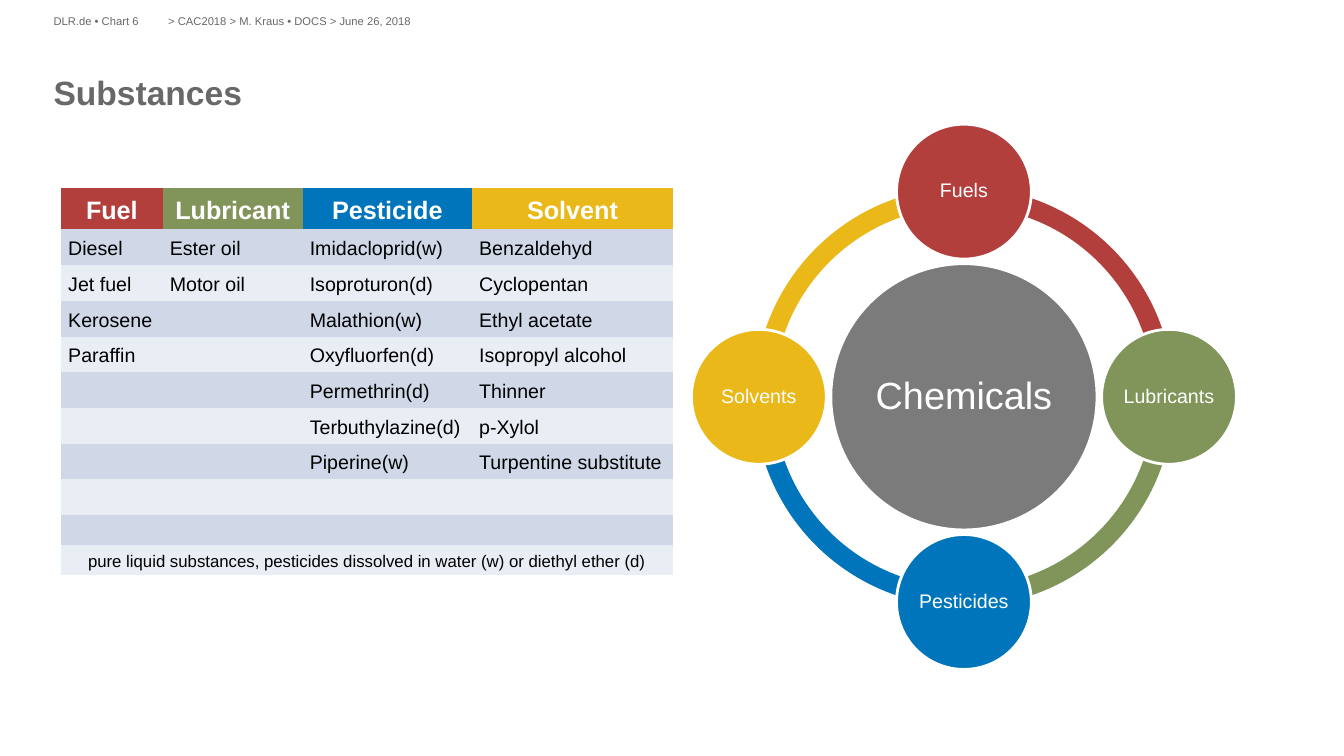
from dataclasses import dataclass
from itertools import zip_longest
from math import cos, radians, sin

from pptx import Presentation
from pptx import util as u
from pptx.dml.color import RGBColor
from pptx.enum import shapes, text


@dataclass(frozen=True)
class Theme:
    font: str = "Arial"
    red: str = "B33F3D"
    green: str = "819459"
    blue: str = "0075BB"
    yellow: str = "EAB818"
    hub: str = "7B7B7B"
    heading: str = "686868"
    black: str = "000000"
    white: str = "FFFFFF"
    bands: tuple[str, str] = ("D0D8E8", "E9EDF4")
    title_size: float = 24
    strap_size: float = 8
    hub_size: float = 27
    column_size: float = 18
    body_size: float = 14
    footnote_size: float = 12


@dataclass(frozen=True)
class Group:
    column: str
    plural: str
    color: str
    width: float
    substances: tuple[str, ...]


@dataclass(frozen=True)
class Caption:
    words: str
    left: float
    top: float
    width: float
    height: float
    size: float
    bold: bool = False


THEME = Theme()
GROUPS = (
    Group("Fuel", "Fuels", THEME.red, 2.56, ("Diesel", "Jet fuel", "Kerosene", "Paraffin")),
    Group("Lubricant", "Lubricants", THEME.green, 3.53, ("Ester oil", "Motor oil")),
    Group("Pesticide", "Pesticides", THEME.blue, 4.27,
          ("Imidacloprid(w)", "Isoproturon(d)", "Malathion(w)", "Oxyfluorfen(d)",
           "Permethrin(d)", "Terbuthylazine(d)", "Piperine(w)")),
    Group("Solvent", "Solvents", THEME.yellow, 5.07,
          ("Benzaldehyd", "Cyclopentan", "Ethyl acetate", "Isopropyl alcohol",
           "Thinner", "p-Xylol", "Turpentine substitute")),
)
CAPTIONS = (
    Caption("Substances", 1.35, 1.8, 31.17, 2.06, THEME.title_size, True),
    Caption("> CAC2018 > M. Kraus • DOCS > June 26, 2018", 4.24, 0.36, 28.27, 0.41, THEME.strap_size),
    Caption("DLR.de • Chart 6", 1.35, 0.36, 2.9, 0.41, THEME.strap_size),
)
FOOTNOTE = "pure liquid substances, pesticides dissolved in water (w) or diethyl ether (d)"
ROW_HEIGHTS = (1.04, *[0.9] * 8, 0.74, 0.74)
NO_STYLE = "{2D5ABB26-0587-4C30-8999-92F81FD0307C}"
CENTER_X, CENTER_Y = 24.3, 10.0
RING, HUB, DISC, ORBIT = 10.57, 6.71, 3.4, 5.17


def write(frame, words: str, size: float, color: str, bold: bool = False,
          centered: bool = False, spacing: float = 1.0) -> None:
    """Fill a text frame with one formatted paragraph."""
    frame.text = words
    paragraph = frame.paragraphs[0]
    paragraph.alignment = text.PP_ALIGN.CENTER if centered else text.PP_ALIGN.LEFT
    paragraph.line_spacing = spacing
    for run in paragraph.runs:
        run.font.name = THEME.font
        run.font.size = u.Pt(size)
        run.font.bold = bold
        run.font.color.rgb = RGBColor.from_string(color)


def clear_margins(frame) -> None:
    """Remove the inner margins of a text frame."""
    frame.margin_left = frame.margin_right = frame.margin_top = frame.margin_bottom = 0


def add_caption(slide, caption: Caption) -> None:
    """Add a line of heading text."""
    box = slide.shapes.add_textbox(u.Cm(caption.left), u.Cm(caption.top),
                                   u.Cm(caption.width), u.Cm(caption.height))
    clear_margins(box.text_frame)
    box.text_frame.word_wrap = True
    write(box.text_frame, caption.words, caption.size, THEME.heading, caption.bold)


def add_round(slide, preset: shapes.MSO_SHAPE, x: float, y: float, diameter: float, color: str):
    """Add a filled round shape centred on a point."""
    figure = slide.shapes.add_shape(preset, u.Cm(x - diameter / 2), u.Cm(y - diameter / 2),
                                    u.Cm(diameter), u.Cm(diameter))
    figure.shadow.inherit = False
    figure.fill.solid()
    figure.fill.fore_color.rgb = RGBColor.from_string(color)
    figure.line.fill.background()
    return figure


def add_arc(slide, start: float, color: str) -> None:
    """Add a quarter of the ring, clockwise from a start angle."""
    arc = add_round(slide, shapes.MSO_SHAPE.BLOCK_ARC, CENTER_X, CENTER_Y, RING, color)
    arc.adjustments[0] = start * 0.6
    arc.adjustments[1] = (start + 90) % 360 * 0.6
    arc.adjustments[2] = 0.046


def add_disc(slide, x: float, y: float, diameter: float, color: str, label: str, size: float) -> None:
    """Add a white-edged disc with its label."""
    disc = add_round(slide, shapes.MSO_SHAPE.OVAL, x, y, diameter, color)
    disc.line.color.rgb = RGBColor.from_string(THEME.white)
    disc.line.width = u.Pt(2)
    clear_margins(disc.text_frame)
    disc.text_frame.word_wrap = False
    disc.text_frame.vertical_anchor = text.MSO_ANCHOR.MIDDLE
    write(disc.text_frame, label, size, THEME.white, centered=True, spacing=0.9)


def add_wheel(slide) -> None:
    """Draw the ring of groups around the hub."""
    starts = [(270 + 90 * index) % 360 for index in range(len(GROUPS))]
    for start, group in zip(starts, GROUPS):
        add_arc(slide, start, group.color)
    add_disc(slide, CENTER_X, CENTER_Y, HUB, THEME.hub, "Chemicals", THEME.hub_size)
    for start, group in zip(starts, GROUPS):
        add_disc(slide, CENTER_X + ORBIT * cos(radians(start)), CENTER_Y + ORBIT * sin(radians(start)),
                 DISC, group.color, group.plural, THEME.body_size)


def style_cell(cell, color: str) -> None:
    """Set the fill, margins and anchor of a cell."""
    cell.fill.solid()
    cell.fill.fore_color.rgb = RGBColor.from_string(color)
    cell.margin_left = cell.margin_right = u.Cm(0.18)
    cell.margin_top = cell.margin_bottom = 0
    cell.vertical_anchor = text.MSO_ANCHOR.MIDDLE


def add_substances(slide) -> None:
    """Add the table of substances by group."""
    last = len(ROW_HEIGHTS) - 1
    table = slide.shapes.add_table(
        len(ROW_HEIGHTS), len(GROUPS), u.Cm(1.54), u.Cm(4.74),
        u.Cm(sum(group.width for group in GROUPS)), u.Cm(sum(ROW_HEIGHTS))).table
    table._tbl.tblPr[0].text = NO_STYLE
    for row, height in zip(table.rows, ROW_HEIGHTS):
        row.height = u.Cm(height)
    for index, group in enumerate(GROUPS):
        table.columns[index].width = u.Cm(group.width)
        for row in range(1, last + 1):
            style_cell(table.cell(row, index), THEME.bands[(row - 1) % 2])
        heading = table.cell(0, index)
        style_cell(heading, group.color)
        write(heading.text_frame, group.column, THEME.column_size, THEME.white, True, True, 1.15)
    for row, names in enumerate(zip_longest(*(group.substances for group in GROUPS)), 1):
        for index, name in enumerate(names):
            if name:
                write(table.cell(row, index).text_frame, name, THEME.body_size, THEME.black, spacing=1.15)
    for row in (last - 1, last):
        table.cell(row, 0).merge(table.cell(row, len(GROUPS) - 1))
    write(table.cell(last, 0).text_frame, FOOTNOTE, THEME.footnote_size, THEME.black,
          centered=True, spacing=1.15)


def main() -> None:
    """Build and save the slide."""
    deck = Presentation()
    deck.slide_width, deck.slide_height = u.Cm(33.88), u.Cm(19.05)
    slide = deck.slides.add_slide(deck.slide_layouts[6])
    for caption in CAPTIONS:
        add_caption(slide, caption)
    add_wheel(slide)
    add_substances(slide)
    deck.save("out.pptx")


if __name__ == "__main__":
    main()
